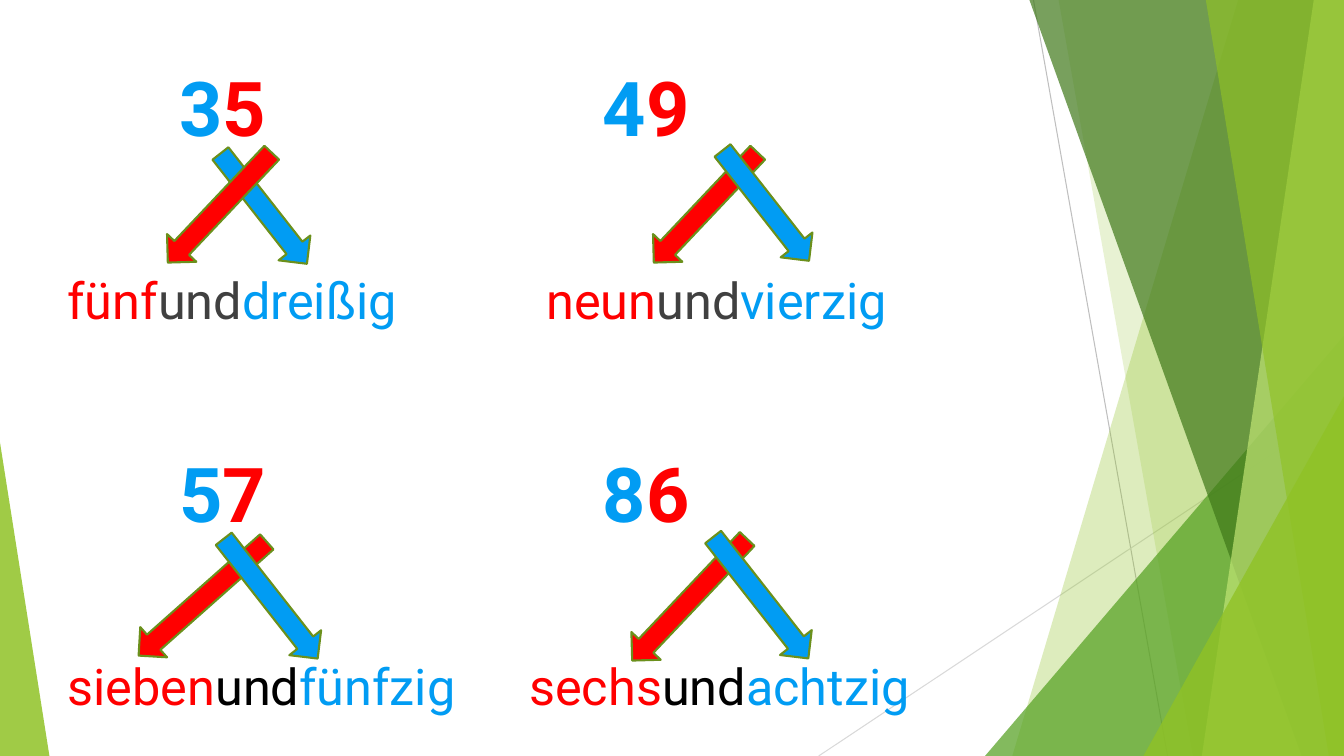
from lxml import etree
from pptx import Presentation, util as u
from pptx.dml.color import RGBColor
from pptx.enum import shapes, text
from pptx.oxml.ns import qn

PX = 9144  # one px is a hundredth of an inch
WIDE, HIGH = 1333, 750
FONT = "Roboto"
HUES = {
    "blue": "019CF3", "red": "FF0000", "grey": "404040", "black": "000000",
    "lime": "90C226", "leaf": "54A021", "pine": "3F7819", "pale": "C0E474",
    "edge": "6B901C", "thin": "BFBFBF", "faint": "D9D9D9",
}


class Deck:
    def __init__(self):
        self.prs = Presentation()
        self.prs.slide_width, self.prs.slide_height = WIDE * PX, HIGH * PX
        self.slide = self.prs.slides.add_slide(self.prs.slide_layouts[6])
        self.items = self.slide.shapes

    def hue(self, name):
        return RGBColor.from_string(HUES[name])

    def paint(self, item, hue, alpha=100):
        item.shadow.inherit = False
        item.fill.solid()
        item.fill.fore_color.rgb = self.hue(hue)
        item.line.fill.background()
        if alpha < 100:
            color = item.fill._xPr.find(".//" + qn("a:srgbClr"))
            etree.SubElement(color, qn("a:alpha"), val=str(alpha * 1000))

    def line(self, x1, y1, x2, y2, hue):
        item = self.items.add_connector(
            shapes.MSO_CONNECTOR.STRAIGHT, x1 * PX, y1 * PX, x2 * PX, y2 * PX)
        item.line.color.rgb = self.hue(hue)
        item.line.width = u.Pt(0.75)
        etree.SubElement(item._element.spPr, qn("a:effectLst"))

    def band(self, top, foot, hue, alpha):
        """Fill from a slanted left edge to the right side of the slide."""
        path = self.items.build_freeform(top, 0, scale=PX)
        path.add_line_segments([(WIDE, 0), (WIDE, HIGH), (foot, HIGH)])
        self.paint(path.convert_to_shape(), hue, alpha)

    def wedge(self, x, y, w, tip, hue, alpha):
        """Triangle standing on the bottom of the slide."""
        item = self.items.add_shape(
            shapes.MSO_SHAPE.ISOSCELES_TRIANGLE,
            x * PX, y * PX, w * PX, (HIGH - y) * PX)
        item.adjustments[0] = tip
        self.paint(item, hue, alpha)

    def arrow(self, x, y, w, turn, hue):
        item = self.items.add_shape(
            shapes.MSO_SHAPE.RIGHT_ARROW, x * PX, y * PX, w * PX, 40 * PX)
        item.rotation = turn
        self.paint(item, hue)
        item.line.color.rgb = self.hue("edge")
        item.line.width = u.Pt(1.5)

    def text(self, x, y, w, h, rows):
        frame = self.items.add_textbox(x * PX, y * PX, w * PX, h * PX).text_frame
        frame.word_wrap = True
        frame.vertical_anchor = text.MSO_ANCHOR.TOP
        for i, (size, bold, stops, runs) in enumerate(rows):
            para = frame.add_paragraph() if i else frame.paragraphs[0]
            tabs = etree.SubElement(para._p.get_or_add_pPr(), qn("a:tabLst"))
            for stop in stops:
                etree.SubElement(tabs, qn("a:tab"), pos=str(stop * PX), algn="l")
            if i:
                para.space_before = u.Pt(84)
            for words, hue in runs:
                run = para.add_run()
                run.text = words
                run.font.name, run.font.size = FONT, u.Pt(size)
                run.font.bold = bold
                run.font.color.rgb = self.hue(hue)


def digits(left, right):
    runs = []
    for tens, ones in (left, right):
        runs += [("\t" + tens, "blue"), (ones, "red")]
    return 54, True, (111, 531), runs


def words(stop, link, left, right):
    runs = []
    for lead, (ones, tens) in zip(("", "\t"), (left, right)):
        runs += [(lead + ones, "red"), ("und", link), (tens, "blue")]
    return 36, False, (stop,), runs


def main():
    deck = Deck()

    # Green backdrop
    deck.line(1025, 0, 1158, 750, "thin")
    deck.line(1333, 403, 812, 750, "faint")
    deck.band(1228, 1004, "lime", 30)
    deck.band(1050, 1183, "lime", 20)
    deck.wedge(977, 333, 356, 1, "leaf", 72)
    deck.band(1021, 1291, "pine", 70)
    deck.band(1303, 1192, "pale", 70)
    deck.band(1196, 1318, "lime", 65)
    deck.wedge(1134, 393, 199, 1, "lime", 80)
    deck.wedge(0, 439, 49, 0, "lime", 85)

    # Numbers and their names
    deck.text(57, 55, 1059, 662, [
        digits("35", "49"),
        words(475, "grey", ("fünf", "dreißig"), ("neun", "vierzig")),
        digits("57", "86"),
        words(458, "black", ("sieben", "fünfzig"), ("sechs", "achtzig")),
    ])

    # Crossed arrows from digit to word
    for x, y, w, turn, hue in (
        (192, 187, 139, 51.9, "blue"),
        (143, 186, 150, 133.4, "red"),
        (625, 186, 150, 133.4, "red"),
        (116, 574, 170, 138.4, "red"),
        (601, 575, 166, 133.4, "red"),
        (193, 574, 151, 51.9, "blue"),
        (678, 573, 153, 51.9, "blue"),
        (690, 184, 139, 51.9, "blue"),
    ):
        deck.arrow(x, y, w, turn, hue)

    deck.prs.save("out.pptx")


if __name__ == "__main__":
    main()
